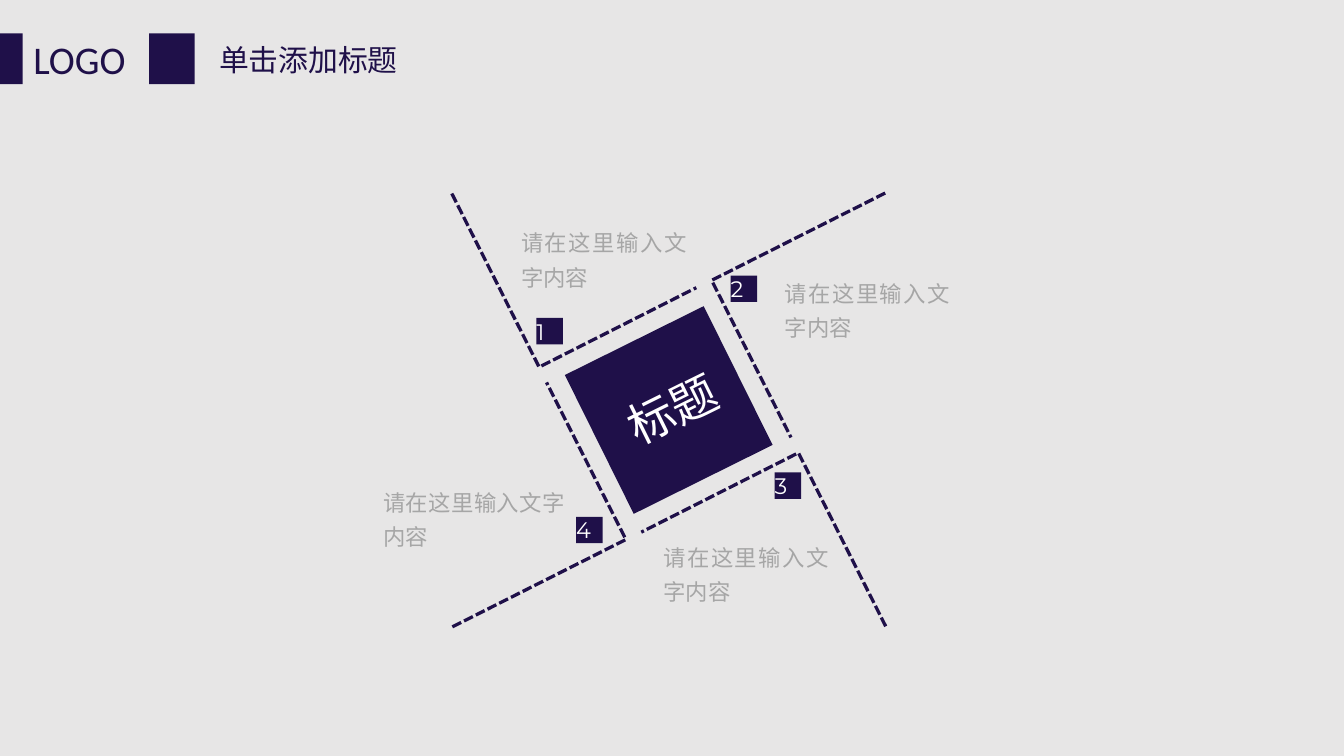
from lxml import etree
from pptx import Presentation
from pptx.dml.color import RGBColor
from pptx.enum.dml import MSO_LINE
from pptx.enum.shapes import MSO_SHAPE
from pptx.enum.text import MSO_ANCHOR, PP_ALIGN
from pptx.oxml.ns import qn
from pptx.util import Cm, Pt

RECT = MSO_SHAPE.RECTANGLE
DASH = MSO_LINE.SQUARE_DOT
TOP, MIDDLE = MSO_ANCHOR.TOP, MSO_ANCHOR.MIDDLE
LEFT, JUSTIFY = PP_ALIGN.LEFT, PP_ALIGN.JUSTIFY

NAVY, GREY, WHITE, PAPER = "1F1049", "A6A6A6", "FFFFFF", "E7E6E6"
HEAD, DIGIT, BODY = "Calibri", "Montserrat", "Noto Sans CJK SC"
INSETS = (0.25, 0.13, 0.25, 0.13)

HEADINGS = [
    ("LOGO", (0.38, 0.53, 2.57, 1.14), 21),
    ("单击添加标题", (3.89, 0.66, 5.49, 0.94), 16),
]
BARS = [(0, 0.63, 0.43, 0.96), (2.82, 0.63, 0.86, 0.96)]
CENTER = (12.64, 7.75)
CORE_SIZE, CORE_TURN = 2.93, 333.6
ARM = [(4.1, 4.09), (2.45, 0.81), (-0.52, 2.31)]
BADGE_SIZE = 0.5
BADGES = [("1", 10.14, 6.01), ("2", 13.81, 5.21), ("3", 14.64, 8.93), ("4", 10.89, 9.77)]
CAPTION = "请在这里输入文字内容"
CAPTIONS = [
    (14.58, 4.93, 3.63, 1.73),
    (9.6, 4.14, 3.63, 1.4),
    (12.29, 9.91, 3.63, 1.75),
    (6.99, 8.92, 3.94, 1.65),
]


def rgb(value):
    return RGBColor.from_string(value)


def write(sp, text, size, font, color, align=LEFT, anchor=TOP, insets=INSETS, wrap=True, spacing=None):
    tf = sp.text_frame
    tf.word_wrap = wrap
    tf.vertical_anchor = anchor
    tf.margin_left, tf.margin_top, tf.margin_right, tf.margin_bottom = map(Cm, insets)
    p = tf.paragraphs[0]
    p.text = text
    p.alignment = align
    p.line_spacing = spacing
    p.font.size = Pt(size)
    p.font.name = font
    p.font.color.rgb = rgb(color)
    props = p._p.pPr.find(qn("a:defRPr"))
    etree.SubElement(props, qn("a:ea")).set("typeface", BODY)


def add_text(s, box, *args, **kwargs):
    write(s.shapes.add_textbox(*map(Cm, box)), *args, **kwargs)


def add_block(s, box):
    sp = s.shapes.add_shape(RECT, *map(Cm, box))
    sp.shadow.inherit = False
    sp.fill.solid()
    sp.fill.fore_color.rgb = rgb(NAVY)
    sp.line.fill.background()
    return sp


def add_arm(s, offsets):
    points = [(Cm(CENTER[0] + x), Cm(CENTER[1] + y)) for x, y in offsets]
    builder = s.shapes.build_freeform(*points[0])
    builder.add_line_segments(points[1:], close=False)
    sp = builder.convert_to_shape()
    sp.shadow.inherit = False
    sp.fill.background()
    sp.line.color.rgb = rgb(NAVY)
    sp.line.width = Pt(1.75)
    sp.line.dash_style = DASH


def main():
    prs = Presentation()
    prs.slide_width, prs.slide_height = Cm(25.4), Cm(14.29)
    s = prs.slides.add_slide(prs.slide_layouts[6])
    s.background.fill.solid()
    s.background.fill.fore_color.rgb = rgb(PAPER)

    for text, box, size in HEADINGS:
        add_text(s, box, text, size, HEAD, NAVY)
    for box in BARS:
        add_block(s, box)

    corner = [c - CORE_SIZE / 2 for c in CENTER]
    core = add_block(s, (*corner, CORE_SIZE, CORE_SIZE))
    core.rotation = CORE_TURN
    write(core, "标题", 25, HEAD, WHITE, JUSTIFY, MIDDLE, (0.65, 0.13, 0.25, 0.13))

    for digit, x, y in BADGES:
        badge = add_block(s, (x, y, BADGE_SIZE, BADGE_SIZE))
        write(badge, digit, 12, DIGIT, WHITE, anchor=MIDDLE, insets=(0, 0, 0, 0), wrap=False)

    offsets = ARM
    for _ in range(4):
        add_arm(s, offsets)
        offsets = [(-y, x) for x, y in offsets]

    for box in CAPTIONS:
        add_text(s, box, CAPTION, 12, BODY, GREY, JUSTIFY, MIDDLE, spacing=1.3)

    prs.save("out.pptx")


if __name__ == "__main__":
    main()
